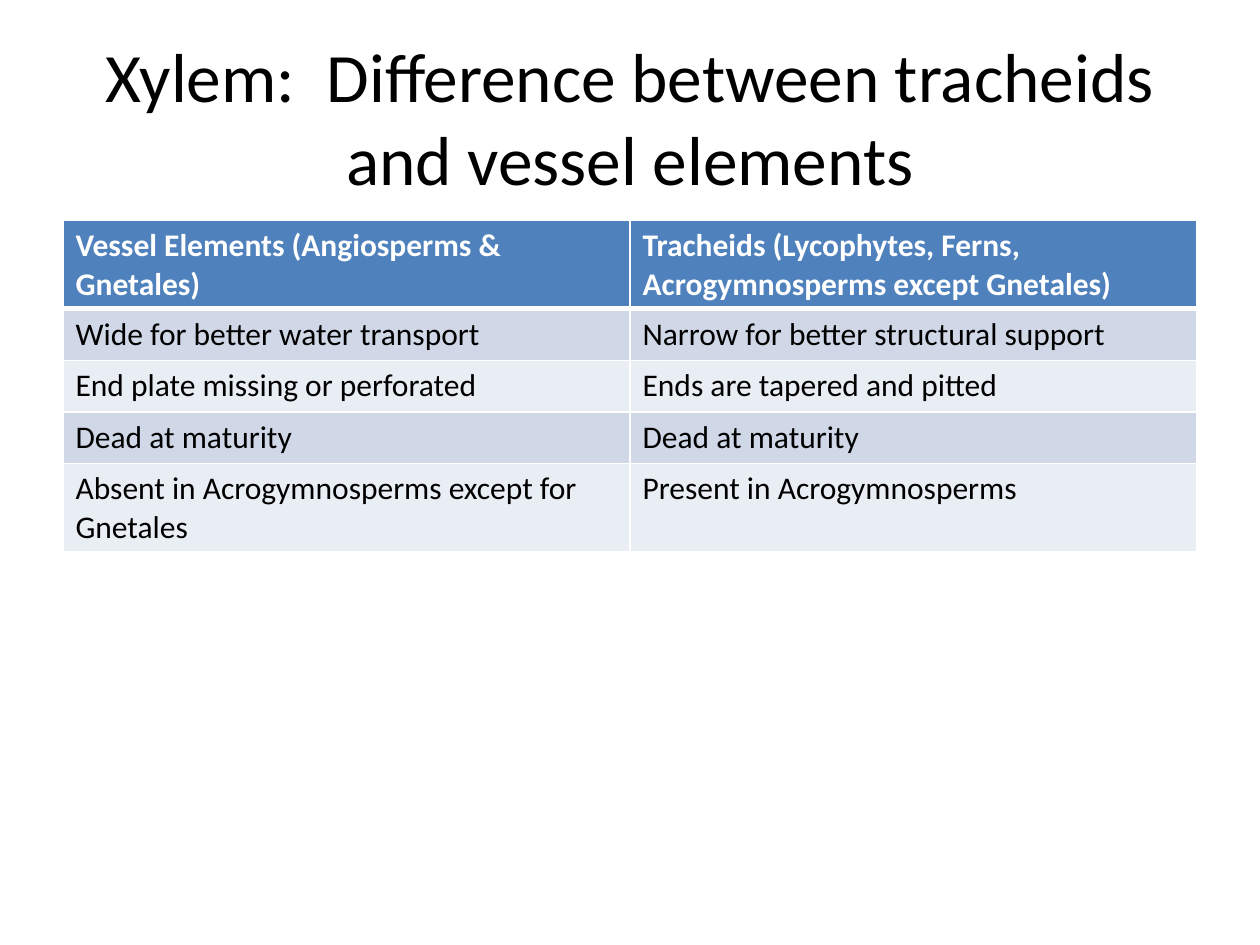
from typing import NamedTuple

import pptx
import pptx.dml.color
import pptx.enum.text
import pptx.oxml
import pptx.oxml.ns
import pptx.util

Inches = pptx.util.Inches
FONT = "Calibri"
COLORS = {
    "ink": "000000",
    "white": "FFFFFF",
    "head": "4F81BD",
    "odd": "D0D8E8",
    "even": "E9EDF4",
}


class Row(NamedTuple):
    vessel: str
    tracheid: str


TITLE = "Xylem:  Difference between tracheids and vessel elements"
ROWS = [
    Row("Vessel Elements (Angiosperms & Gnetales)",
        "Tracheids (Lycophytes, Ferns, Acrogymnosperms except Gnetales)"),
    Row("Wide for better water transport", "Narrow for better structural support"),
    Row("End plate missing or perforated", "Ends are tapered and pitted"),
    Row("Dead at maturity", "Dead at maturity"),
    Row("Absent in Acrogymnosperms except for Gnetales",
        "Present in Acrogymnosperms"),
]


def rgb(name: str) -> pptx.dml.color.RGBColor:
    return pptx.dml.color.RGBColor.from_string(COLORS[name])


def style_text(frame, size: float, color: str, bold: bool = False) -> None:
    for para in frame.paragraphs:
        for run in para.runs:
            run.font.name = FONT
            run.font.size = pptx.util.Pt(size)
            run.font.bold = bold
            run.font.color.rgb = rgb(color)


def add_edges(cell, top: float, bottom: float) -> None:
    """Draw white cell borders, widths in points; they must precede the fill."""
    props = cell._tc.get_or_add_tcPr()
    widths = {"lnL": 1, "lnR": 1, "lnT": top, "lnB": bottom}
    for place, (tag, width) in enumerate(widths.items()):
        props.insert(place, pptx.oxml.parse_xml(
            f'<a:{tag} {pptx.oxml.ns.nsdecls("a")} w="{pptx.util.Pt(width)}">'
            f'<a:solidFill><a:srgbClr val="{COLORS["white"]}"/></a:solidFill>'
            f'</a:{tag}>'))


def add_title(slide, text: str) -> None:
    box = slide.shapes.add_textbox(Inches(0.5), Inches(0.3), Inches(9), Inches(1.25))
    frame = box.text_frame
    frame.word_wrap = True
    frame.vertical_anchor = pptx.enum.text.MSO_ANCHOR.MIDDLE
    frame.text = text
    frame.paragraphs[0].alignment = pptx.enum.text.PP_ALIGN.CENTER
    style_text(frame, 39.6, "ink")


def add_grid(slide, rows: list[Row]) -> None:
    height = 0.41
    table = slide.shapes.add_table(
        len(rows), len(Row._fields), Inches(0.5), Inches(1.75),
        Inches(9), Inches(height * len(rows))).table
    for i, row in enumerate(rows):
        table.rows[i].height = Inches(height)
        head = i == 0
        fill = "head" if head else ("odd" if i % 2 else "even")
        for j, text in enumerate(row):
            cell = table.cell(i, j)
            cell.text_frame.text = text
            style_text(cell.text_frame, 18, "white" if head else "ink", head)
            cell.fill.solid()
            cell.fill.fore_color.rgb = rgb(fill)
            add_edges(cell, 3 if i == 1 else 1, 3 if head else 1)


def main() -> None:
    deck = pptx.Presentation()
    deck.slide_width, deck.slide_height = Inches(10), Inches(7.5)
    slide = deck.slides.add_slide(deck.slide_layouts[6])
    add_title(slide, TITLE)
    add_grid(slide, ROWS)
    deck.save("out.pptx")


if __name__ == "__main__":
    main()
